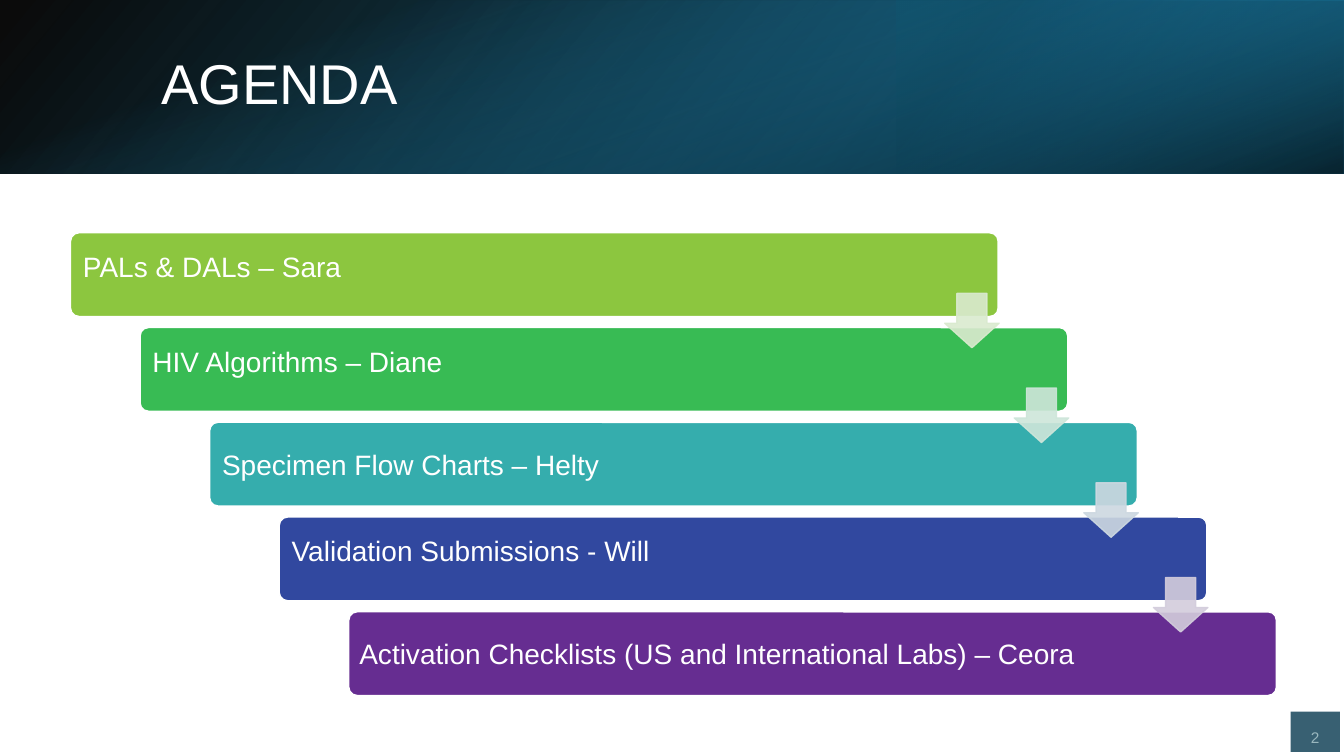
from lxml import etree
from pptx import Presentation
from pptx import util as u
from pptx.dml.color import RGBColor
from pptx.enum import shapes, text
from pptx.oxml import parse_xml
from pptx.oxml.ns import nsdecls, qn

INK = {
    "white": "FFFFFF", "black": "000000", "sea": "1A759B", "deep": "114E68",
    "sky": "239CCF", "slate": "386072", "mist": "99B7BE",
}
# label, bar colour, colour of the arrow below, left inset, bottom inset
ITEMS = [
    ("PALs & DALs – Sara", "8CC63F", "DAEACF", 0.1, 0.21),
    ("HIV Algorithms – Diane", "38BB54", "CEE6DA", 0.1, 0.21),
    ("Specimen Flow Charts – Helty", "35ADAD", "CDD8E1", 0.1, 0.05),
    ("Validation Submissions - Will", "31489F", "D3CDDC", 0.1, 0.21),
    ("Activation Checklists (US and International Labs) – Ceora",
     "662D91", None, 0.08, 0.05),
]
KIND = shapes.MSO_SHAPE


class Deck:
    def __init__(self, font):
        self.font = font
        self.prs = Presentation()
        self.prs.slide_width = u.Inches(13.33)
        self.prs.slide_height = u.Inches(7.5)
        self.slide = self.prs.slides.add_slide(self.prs.slide_layouts[5])

    def label(self, frame, words, size, hue, align, anchor):
        frame.word_wrap = True
        frame.vertical_anchor = anchor
        para = frame.paragraphs[0]
        para.alignment = align
        run = para.add_run()
        run.text = words
        run.font.name = self.font
        run.font.size = u.Pt(size)
        run.font.color.rgb = RGBColor.from_string(hue)
        return para

    def shape(self, kind, box, fill=None, line=None):
        item = self.slide.shapes.add_shape(kind, *map(u.Inches, box))
        item.shadow.inherit = False
        if fill:
            item.fill.solid()
            item.fill.fore_color.rgb = RGBColor.from_string(fill)
        if line:
            item.line.color.rgb = RGBColor.from_string(line)
            item.line.width = u.Pt(1)
        else:
            item.line.fill.background()
        return item

    def sheen(self, box, stops, angle, turn=0, flip=False):
        """Add a rectangle with a gradient of (position, colour, opacity) stops."""
        item = self.shape(KIND.RECTANGLE, box)
        item.rotation = turn
        props = item._element.spPr
        if flip:
            props.find(qn("a:xfrm")).set("flipH", "1")
        marks = "".join(
            f'<a:gs pos="{pos * 1000}"><a:srgbClr val="{INK[hue]}">'
            f'<a:alpha val="{alpha * 1000}"/></a:srgbClr></a:gs>'
            for pos, hue, alpha in stops)
        props.find(qn("a:prstGeom")).addnext(parse_xml(
            f'<a:gradFill {nsdecls("a")} rotWithShape="1"><a:gsLst>{marks}</a:gsLst>'
            f'<a:lin ang="{angle * 60000}" scaled="0"/></a:gradFill>'))

    def title(self, words, box):
        item = self.slide.shapes.title
        item.left, item.top, item.width, item.height = map(u.Inches, box)
        self.slide.shapes._spTree.append(item._element)  # in front of the banner
        para = self.label(item.text_frame, words, 40, INK["white"],
                          text.PP_ALIGN.LEFT, text.MSO_ANCHOR.MIDDLE)
        para.line_spacing = 0.9

    def bar(self, box, words, fill, left, low):
        item = self.shape(KIND.ROUNDED_RECTANGLE, box, fill, INK["white"])
        item.adjustments[0] = 0.1
        frame = item.text_frame
        frame.margin_left = u.Inches(left)
        frame.margin_bottom = u.Inches(low)
        self.label(frame, words, 20, INK["white"],
                   text.PP_ALIGN.LEFT, text.MSO_ANCHOR.MIDDLE)

    def arrow(self, box, hue):
        item = self.shape(KIND.DOWN_ARROW, box, hue, hue)
        item.adjustments[0], item.adjustments[1] = 0.55, 0.45
        for tint in item._element.spPr.iter(qn("a:srgbClr")):
            etree.SubElement(tint, qn("a:alpha")).set("val", "90000")

    def number(self, words, box):
        item = self.shape(KIND.RECTANGLE, box, INK["slate"])
        para = self.label(item.text_frame, words, 11, INK["mist"],
                          text.PP_ALIGN.CENTER, text.MSO_ANCHOR.BOTTOM)
        para.space_after = u.Pt(6)


def main():
    deck = Deck("Arial")
    deck.sheen((0, 0, 13.33, 1.72), [(0, "black", 96), (100, "sea", 100)],
               140, flip=True)
    deck.sheen((8.89, 0, 4.44, 1.72), [(19, "deep", 68), (100, "sky", 79)],
               320, turn=180, flip=True)
    deck.sheen((5.8, -5.8, 1.72, 13.33), [(23, "sky", 0), (99, "black", 74)],
               340, turn=90)
    deck.title("AGENDA", (1.5, 0.38, 10.98, 0.96))
    deck.number("2", (12.8, 7.06, 0.49, 0.4))

    step, drop = 0.69, 0.94
    for i, (words, fill, _, left, low) in enumerate(ITEMS):
        deck.bar((0.7 + i * step, 2.31 + i * drop, 9.2, 0.83),
                 words, fill, left, low)
    for i, (_, _, hue, _, _) in enumerate(ITEMS[:-1]):
        deck.arrow((9.37 + i * step, 2.91 + i * drop, 0.54, 0.54), hue)
    deck.prs.save("out.pptx")


if __name__ == "__main__":
    main()
